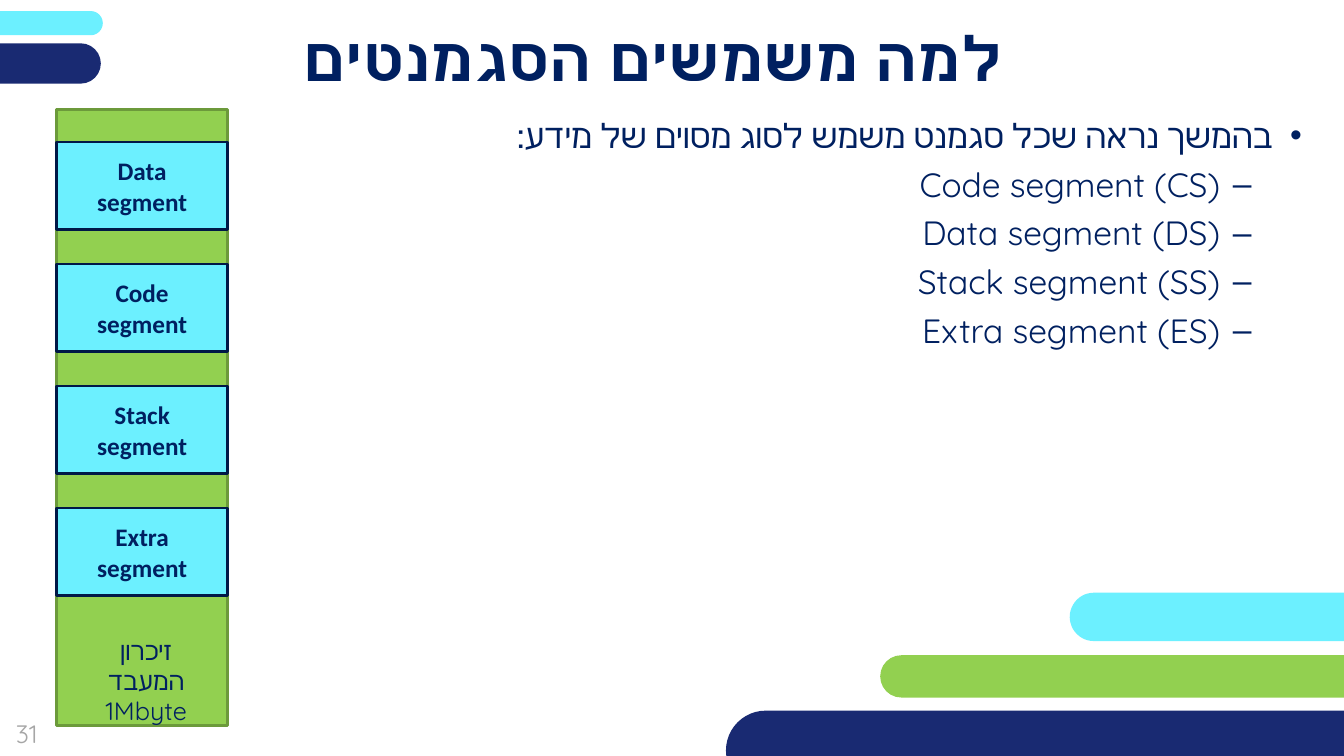
from lxml import etree
from pptx import Presentation
from pptx.dml.color import RGBColor
from pptx.enum.shapes import MSO_SHAPE
from pptx.enum.text import MSO_ANCHOR, PP_ALIGN
from pptx.oxml.ns import qn
from pptx.util import Inches, Pt

RECTANGLE = MSO_SHAPE.RECTANGLE
ROUNDED = MSO_SHAPE.ROUNDED_RECTANGLE
MIDDLE = MSO_ANCHOR.MIDDLE
TOP = MSO_ANCHOR.TOP
CENTER = PP_ALIGN.CENTER
RIGHT = PP_ALIGN.RIGHT

NAVY, CYAN, GREEN, INK = "192A72", "6CF0FF", "92D050", "002060"
GREEN_EDGE, NAVY_EDGE, GRAY = "6C9A3B", "001847", "A6A6A6"
FONT, LABEL_FONT = "Quicksand", "Calibri"


def color(value):
    return RGBColor.from_string(value)


def place(shape, box):
    shape.left, shape.top, shape.width, shape.height = map(Inches, box)


def add_block(page, kind, box, fill, edge=None):
    shape = page.shapes.add_shape(kind, *map(Inches, box))
    shape.shadow.inherit = False
    shape.fill.solid()
    shape.fill.fore_color.rgb = color(fill)
    if edge:
        shape.line.color.rgb = color(edge)
        shape.line.width = Pt(2)
    else:
        shape.line.fill.background()
    return shape


def format_para(para, size, align=CENTER, font=FONT, ink=INK, bold=False, rtl=True):
    para.alignment = align
    if rtl:
        para._p.get_or_add_pPr().set("rtl", "1")
    for span in para.runs:
        span.font.name = font
        span.font.size = Pt(size)
        span.font.bold = bold
        span.font.color.rgb = color(ink)


def write(shape, text, size, anchor=MIDDLE, inset=0.1, **style):
    frame = shape.text_frame
    frame.word_wrap = True
    frame.vertical_anchor = anchor
    frame.margin_left = frame.margin_right = Inches(inset)
    frame.text = text
    format_para(frame.paragraphs[0], size, **style)


def add_bars(page):
    bars = [
        ((7.2, 7.05, 6.55, 0.79), NAVY),
        ((10.61, 5.88, 3.82, 0.48), CYAN),
        ((-1.34, 0.11, 2.36, 0.24), CYAN),
        ((-2.25, 0.43, 3.25, 0.4), NAVY),
        ((8.73, 6.5, 5.21, 0.42), GREEN),
    ]
    for box, fill in bars:
        add_block(page, ROUNDED, box, fill).adjustments[0] = 0.5


def add_title(page, box):
    title = page.shapes.title
    place(title, box)
    write(title, "למה משמשים הסגמנטים", 44, inset=0, bold=True)
    title.text_frame.margin_top = title.text_frame.margin_bottom = 0


def add_bullet(para, mark, margin, hanging):
    properties = para._p.get_or_add_pPr()
    properties.set("marL", str(Inches(margin)))
    properties.set("indent", str(-Inches(hanging)))
    etree.SubElement(properties, qn("a:buFont")).set("typeface", "Arial")
    etree.SubElement(properties, qn("a:buChar")).set("char", mark)


def add_segment_list(page, box):
    frame = page.shapes.add_textbox(*map(Inches, box)).text_frame
    frame.word_wrap = True
    lines = [
        "בהמשך נראה שכל סגמנט משמש לסוג מסוים של מידע:",
        "Code segment (CS)",
        "Data segment (DS)",
        "Stack segment (SS)",
        "Extra segment (ES)",
    ]
    frame.text = "\n".join(lines)
    for index, para in enumerate(frame.paragraphs):
        para.space_after = Pt(6)
        if index == 0:
            add_bullet(para, "•", 0.29, 0.29)
        else:
            para.level = 1
            add_bullet(para, "–", 0.81, 0.31)
        format_para(para, 24, align=RIGHT)


def add_memory(page, box):
    left, top, width, height = box
    add_block(page, RECTANGLE, box, GREEN, GREEN_EDGE)
    for index, name in enumerate(["Data", "Code", "Stack", "Extra"]):
        segment_box = (left, top + 0.32 + index * 1.21, width, 0.87)
        segment = add_block(page, RECTANGLE, segment_box, CYAN, NAVY_EDGE)
        write(segment, f"{name} segment", 18, inset=0.25, font=LABEL_FONT, bold=True)
    caption_box = (left + 0.2, top + 5.16, 1.38, 1.01)
    caption = page.shapes.add_textbox(*map(Inches, caption_box))
    write(caption, "זיכרון המעבד 1Mbyte", 18, anchor=TOP)


def add_page_number(page, box):
    number = page.shapes.add_textbox(*map(Inches, box))
    write(number, "31", 18, ink=GRAY, rtl=False)


def main():
    deck = Presentation()
    deck.slide_width, deck.slide_height = Inches(13.33), Inches(7.5)
    page = deck.slides.add_slide(deck.slide_layouts.get_by_name("Title Only"))
    add_bars(page)
    add_page_number(page, (-0.18, 6.99, 0.89, 0.57))
    add_segment_list(page, (4.56, 1.09, 8.45, 4.44))
    add_title(page, (1.12, 0.17, 10.72, 0.79))
    add_memory(page, (0.56, 1.09, 1.7, 6.11))
    deck.save("out.pptx")


if __name__ == "__main__":
    main()
